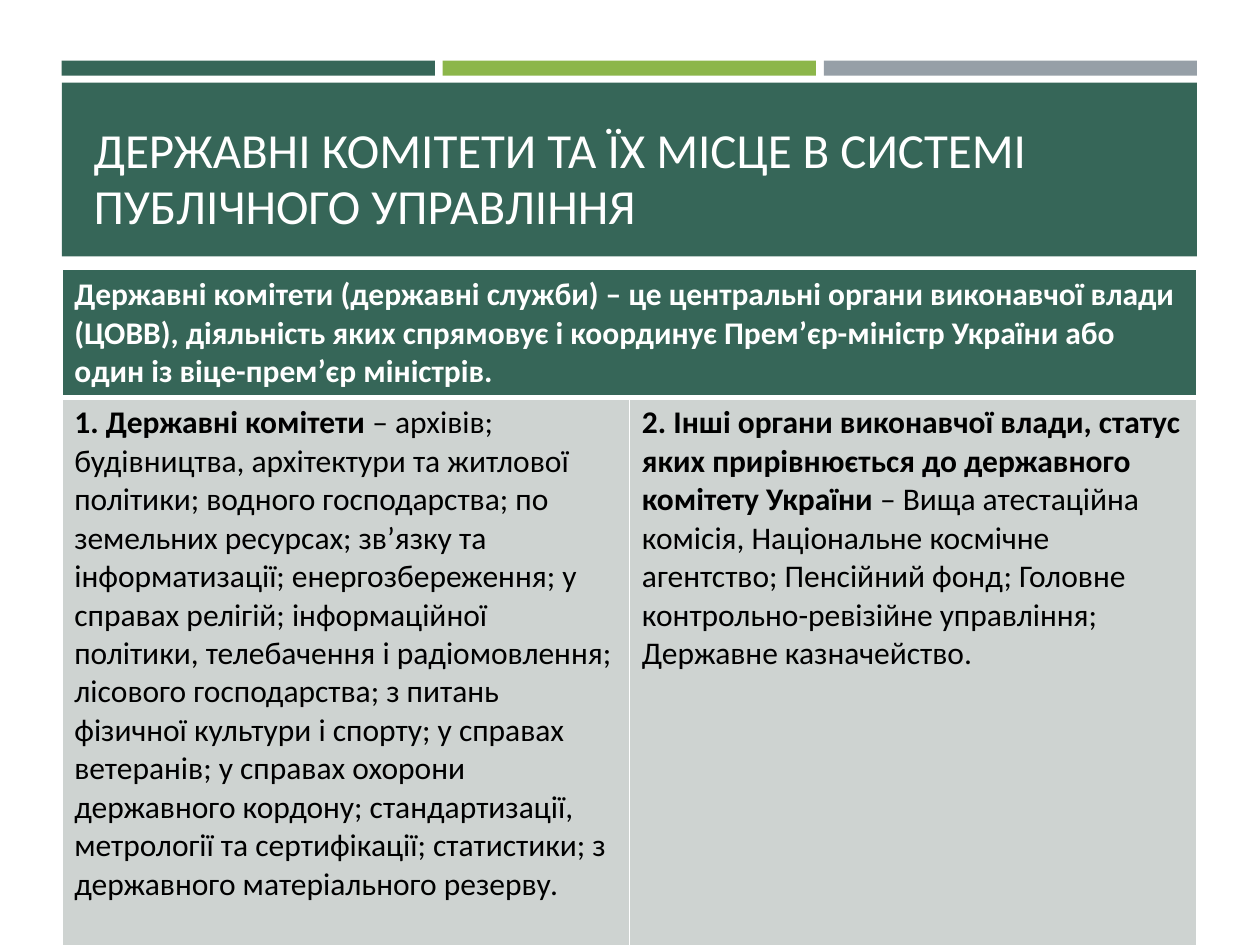
import pptx
import pptx.util
import pptx.dml.color
import pptx.enum.shapes
import pptx.enum.text
import pptx.oxml
import pptx.oxml.ns
import lxml.etree

Pt = pptx.util.Pt
HUES = {"green": "366658", "lime": "8CB64A", "gray": "969FA7",
        "pale": "CED3D1", "white": "FFFFFF", "black": "000000"}
FONT = "Calibri"

TITLE = "ДЕРЖАВНІ КОМІТЕТИ ТА ЇХ МІСЦЕ В СИСТЕМІ ПУБЛІЧНОГО УПРАВЛІННЯ"
HEAD = ("Державні комітети (державні служби) – це центральні органи виконавчої "
        "влади (ЦОВВ), діяльність яких спрямовує і координує Прем’єр-міністр "
        "України або один із віце-прем’єр міністрів.")
BODY = [
    ("1. Державні комітети ",
     "– архівів; будівництва, архітектури та житлової політики; водного "
     "господарства; по земельних ресурсах; зв’язку та інформатизації; "
     "енергозбереження; у справах релігій; інформаційної політики, телебачення "
     "і радіомовлення; лісового господарства; з питань фізичної культури і "
     "спорту; у справах ветеранів; у справах охорони державного кордону; "
     "стандартизації, метрології та сертифікації; статистики; з державного "
     "матеріального резерву."),
    ("2. Інші органи виконавчої влади, статус яких прирівнюється до державного "
     "комітету України ",
     "– Вища атестаційна комісія, Національне космічне агентство; Пенсійний "
     "фонд; Головне контрольно-ревізійне управління; Державне казначейство."),
]


def color(name):
    return pptx.dml.color.RGBColor.from_string(HUES[name])


def style(font, size, hue):
    font.name, font.size = FONT, Pt(size)
    font.color.rgb = color(hue)


def bar(slide, x, y, w, h, hue):
    shape = slide.shapes.add_shape(
        pptx.enum.shapes.MSO_SHAPE.RECTANGLE, Pt(x), Pt(y), Pt(w), Pt(h))
    shape.shadow.inherit = False
    shape.fill.solid()
    shape.fill.fore_color.rgb = color(hue)
    shape.line.fill.background()


def stripes(slide, x, y, w, h, gap=4.5):
    hues = ["green", "lime", "gray"]
    part = (w - gap * (len(hues) - 1)) / len(hues)
    for i, hue in enumerate(hues):
        bar(slide, x + i * (part + gap), y, part, h, hue)


def banner(slide, x, y, w, h):
    bar(slide, x, y, w, h, "green")
    title = slide.shapes.title
    # The placeholder comes first in the tree, so raise it above the bar.
    title._element.getparent().append(title._element)
    title.left, title.top = Pt(x + 11), Pt(y + 6.5)
    title.width, title.height = Pt(w - 20), Pt(h - 14.5)
    frame = title.text_frame
    frame.word_wrap = True
    frame.auto_size = pptx.enum.text.MSO_AUTO_SIZE.NONE
    frame.vertical_anchor = pptx.enum.text.MSO_ANCHOR.BOTTOM
    frame.text = TITLE
    para = frame.paragraphs[0]
    para.alignment = pptx.enum.text.PP_ALIGN.LEFT
    para.line_spacing = 0.95
    style(para.font, 28, "white")


def edge(cell, low, high):
    """Draw white borders: low and high are the top and bottom widths."""
    props = cell._tc.get_or_add_tcPr()
    widths = {"lnL": 1, "lnR": 1, "lnT": low, "lnB": high}
    for i, (tag, width) in enumerate(widths.items()):
        line = lxml.etree.Element(pptx.oxml.ns.qn("a:" + tag), w=str(Pt(width)))
        fill = lxml.etree.SubElement(line, pptx.oxml.ns.qn("a:solidFill"))
        lxml.etree.SubElement(
            fill, pptx.oxml.ns.qn("a:srgbClr"), val=HUES["white"])
        props.insert(i, line)


def fill_cell(cell, runs, ink, back):
    """Write runs, the first one bold, in a filled cell."""
    cell.fill.solid()
    cell.fill.fore_color.rgb = color(back)
    para = cell.text_frame.paragraphs[0]
    style(para.font, 18, ink)
    for i, text in enumerate(runs):
        run = para.add_run()
        run.text = text
        style(run.font, 18, ink)
        run.font.bold = i == 0


def grid(slide, x, y, w, h, top=72.5):
    table = slide.shapes.add_table(2, 2, Pt(x), Pt(y), Pt(w), Pt(h)).table
    for col in table.columns:
        col.width = Pt(w / 2)
    for row, high in zip(table.rows, [top, h - top]):
        row.height = Pt(high)
    table.cell(0, 0).merge(table.cell(0, 1))
    fill_cell(table.cell(0, 0), [HEAD], "white", "green")
    for i, runs in enumerate(BODY):
        fill_cell(table.cell(1, i), runs, "black", "pale")
        edge(table.cell(0, i), 1, 3)
        edge(table.cell(1, i), 3, 1)


def main():
    deck = pptx.Presentation()
    deck.slide_width, deck.slide_height = Pt(720), Pt(540)
    slide = deck.slides.add_slide(deck.slide_layouts[5])
    left, wide = 35.3, 648.7
    stripes(slide, left, 34.7, wide, 8.5)
    banner(slide, left, 47.3, wide, 99.2)
    grid(slide, left, 154, wide, 386)
    deck.save("out.pptx")


if __name__ == "__main__":
    main()
